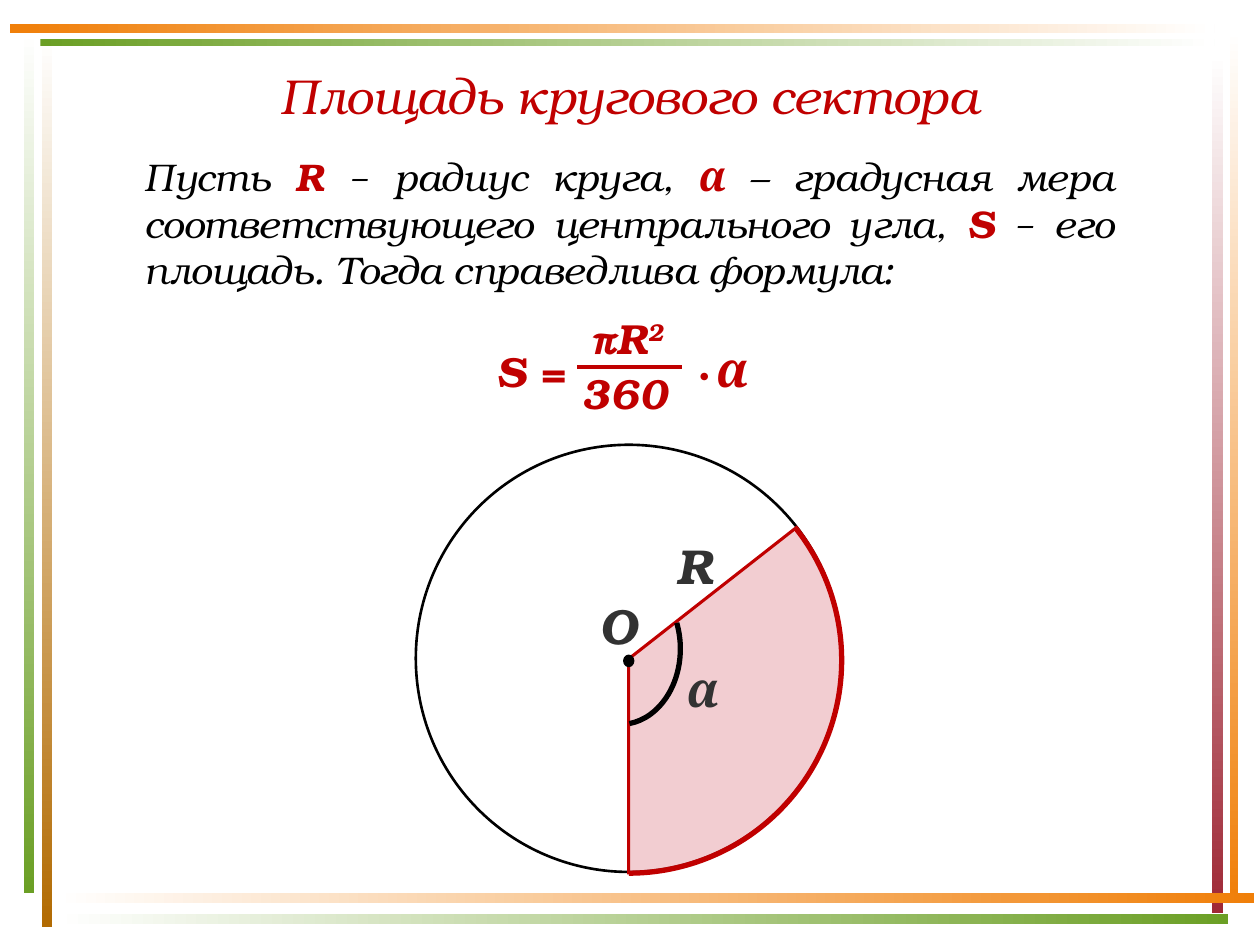
from lxml import etree
from pptx import Presentation
from pptx.dml.color import RGBColor
from pptx.enum import shapes, text
from pptx.oxml import ns
from pptx.util import Inches, Pt

COLORS = {"orange": "F07F09", "green": "6B9F25", "brown": "B26B02", "wine": "9F2936",
          "red": "C00000", "pink": "E69CA4", "dark": "323232", "black": "000000",
          "white": "FFFFFF"}
SERIF, GREEK, PLAIN = "TeX Gyre Bonum", "Cambria", "Times New Roman"
MIDDLE_DOWN, LEFT_RIGHT = 270, 0


def rgb(name):
    return RGBColor.from_string(COLORS[name])


def style(font, size=None, color=None, face=None, bold=None, italic=None):
    """Set only the font properties that are given."""
    if size:
        font.size = Pt(size)
    if color:
        font.color.rgb = rgb(color)
    if face:
        font.name = face
    if bold is not None:
        font.bold = bold
    if italic is not None:
        font.italic = italic


def add_bar(page, box, start, end, angle):
    """Gradient bar of the frame."""
    bar = page.shapes.add_shape(shapes.MSO_SHAPE.RECTANGLE, *map(Inches, box))
    bar.shadow.inherit = False
    bar.line.fill.background()
    bar.fill.gradient()
    bar.fill.gradient_angle = angle
    for stop, name in zip(bar.fill.gradient_stops, (start, end)):
        stop.color.rgb = rgb(name)


def add_text(page, box, spans, base, align=text.PP_ALIGN.LEFT, wrap=True,
             anchor=text.MSO_ANCHOR.TOP):
    """One paragraph; spans are (words, overrides of the base style)."""
    label = page.shapes.add_textbox(*map(Inches, box))
    frame = label.text_frame
    frame.word_wrap = wrap
    frame.vertical_anchor = anchor
    para = frame.paragraphs[0]
    para.alignment = align
    style(para.font, **base)
    for words, changes in spans:
        span = para.add_run()
        span.text = words
        if len(spans) > 1:
            style(span.font, **{**base, **changes})
    return para


def add_label(page, box, words, color, size, face=SERIF):
    base = dict(size=size, color=color, face=face, bold=True, italic=True)
    return add_text(page, box, [(words, {})], base, wrap=False)


def outline(shape, color, width, fill=None):
    shape.shadow.inherit = False
    shape.line.color.rgb = rgb(color)
    shape.line.width = Pt(width)
    if fill:
        shape.fill.solid()
        shape.fill.fore_color.rgb = rgb(fill)
    else:
        shape.fill.background()


def add_round(page, kind, box, color, width, fill=None, angles=()):
    """Ellipse or arc; angles are in degrees."""
    shape = page.shapes.add_shape(kind, *map(Inches, box))
    outline(shape, color, width, fill)
    for index, angle in enumerate(angles):
        shape.adjustments[index] = angle * 0.6
    return shape


def set_half_transparent(shape):
    color = shape.fill._xPr.find(ns.qn("a:solidFill"))[0]
    etree.SubElement(color, ns.qn("a:alpha"), val="50000")


def add_tab(para, position):
    props = para._p.get_or_add_pPr()
    tabs = etree.Element(ns.qn("a:tabLst"))
    etree.SubElement(tabs, ns.qn("a:tab"), pos=str(Inches(position)), algn="l")
    props.find(ns.qn("a:defRPr")).addprevious(tabs)


def add_frame(page):
    for box, color in (((0.33, 0.28, 0.08, 7.08), "brown"), ((0.19, 0.25, 0.08, 6.84), "green"),
                       ((9.76, 0.24, 0.07, 6.93), "orange"), ((9.62, 0.42, 0.09, 6.83), "wine")):
        add_bar(page, box, "white", color, MIDDLE_DOWN)
    for box, color in (((0.45, 7.09, 9.5, 0.08), "orange"), ((0.45, 7.25, 9.3, 0.08), "green")):
        add_bar(page, box, "white", color, LEFT_RIGHT)
    for box, color in (((0.32, 0.31, 9.32, 0.06), "green"), ((0.08, 0.19, 9.56, 0.07), "orange")):
        add_bar(page, box, color, "white", LEFT_RIGHT)


def add_statement(page):
    add_text(page, (0.62, 0.44, 8.75, 0.62), [("Площадь кругового сектора", {})],
             dict(size=28, color="red", face=SERIF, italic=True),
             text.PP_ALIGN.CENTER, anchor=text.MSO_ANCHOR.MIDDLE)
    symbol = dict(color="red", bold=True)
    minus = ("−", dict(face=GREEK))
    spans = [("Пусть ", {}), ("R ", symbol), minus, (" радиус круга, ", {}),
             ("α", dict(symbol, size=24, face=GREEK)),
             (" ", dict(face=PLAIN, italic=False)),
             ("– градусная мера соответствующего центрального угла, ", {}),
             ("S ", symbol), minus,
             (" его площадь. Тогда справедлива формула: ", {})]
    add_text(page, (1.05, 1.14, 7.89, 1.25), spans,
             dict(size=22, color="black", face=SERIF, bold=False, italic=True),
             text.PP_ALIGN.JUSTIFY)


def add_formula(page):
    base = dict(size=24, color="red", face=SERIF, bold=True, italic=True)
    numerator = add_text(page, (4.59, 2.43, 0.85, 0.5), [("πR", {}), ("2", {})], base, wrap=False)
    numerator.runs[1].font._element.set("baseline", "30000")
    add_label(page, (4.52, 2.87, 0.89, 0.5), "360", "red", 24)
    sides = add_text(page, (3.84, 2.64, 2.31, 0.57),
                     [("S =\t·", {}), (" ", dict(size=11)), ("α", dict(size=28, face=GREEK))],
                     base)
    add_tab(sides, 1.58)
    rule = page.shapes.add_connector(shapes.MSO_CONNECTOR.STRAIGHT, Inches(4.58), Inches(2.91),
                                     Inches(5.41), Inches(2.91))
    rule.line.color.rgb = rgb("red")
    rule.line.width = Pt(2.25)
    etree.SubElement(rule._element.spPr, ns.qn("a:effectLst"))


def add_sector(page):
    oval, arc = shapes.MSO_SHAPE.OVAL, shapes.MSO_SHAPE.ARC
    add_round(page, oval, (3.3, 3.53, 3.38, 3.39), "black", 1.5)
    sector = add_round(page, arc, (3.3, 3.55, 3.38, 3.38), "red", 3, "pink", (321.7, 89.98))
    set_half_transparent(sector)

    # Two radii from the centre
    builder = page.shapes.build_freeform(Inches(4.99), Inches(6.94))
    builder.add_line_segments([(Inches(4.99), Inches(5.23)), (Inches(6.33), Inches(4.18))],
                              close=False)
    outline(builder.convert_to_shape(), "red", 1.75)

    # Central angle and centre point
    add_round(page, arc, (4.45, 4.55, 0.95, 1.2), "black", 3, angles=(335.22, 83.22))
    add_round(page, oval, (4.95, 5.2, 0.08, 0.09), "black", 0.75, "black")

    # Letters
    add_label(page, (5.27, 4.2, 0.49, 0.57), "R", "dark", 28)
    add_label(page, (5.35, 5.18, 0.45, 0.57), "α", "dark", 28, GREEK)
    add_label(page, (4.66, 4.68, 0.5, 0.57), "О", "dark", 28)


def main():
    deck = Presentation()
    deck.slide_width, deck.slide_height = Inches(10), Inches(7.5)
    page = deck.slides.add_slide(deck.slide_layouts[6])
    add_frame(page)
    add_statement(page)
    add_formula(page)
    add_sector(page)
    deck.save("out.pptx")


if __name__ == "__main__":
    main()
